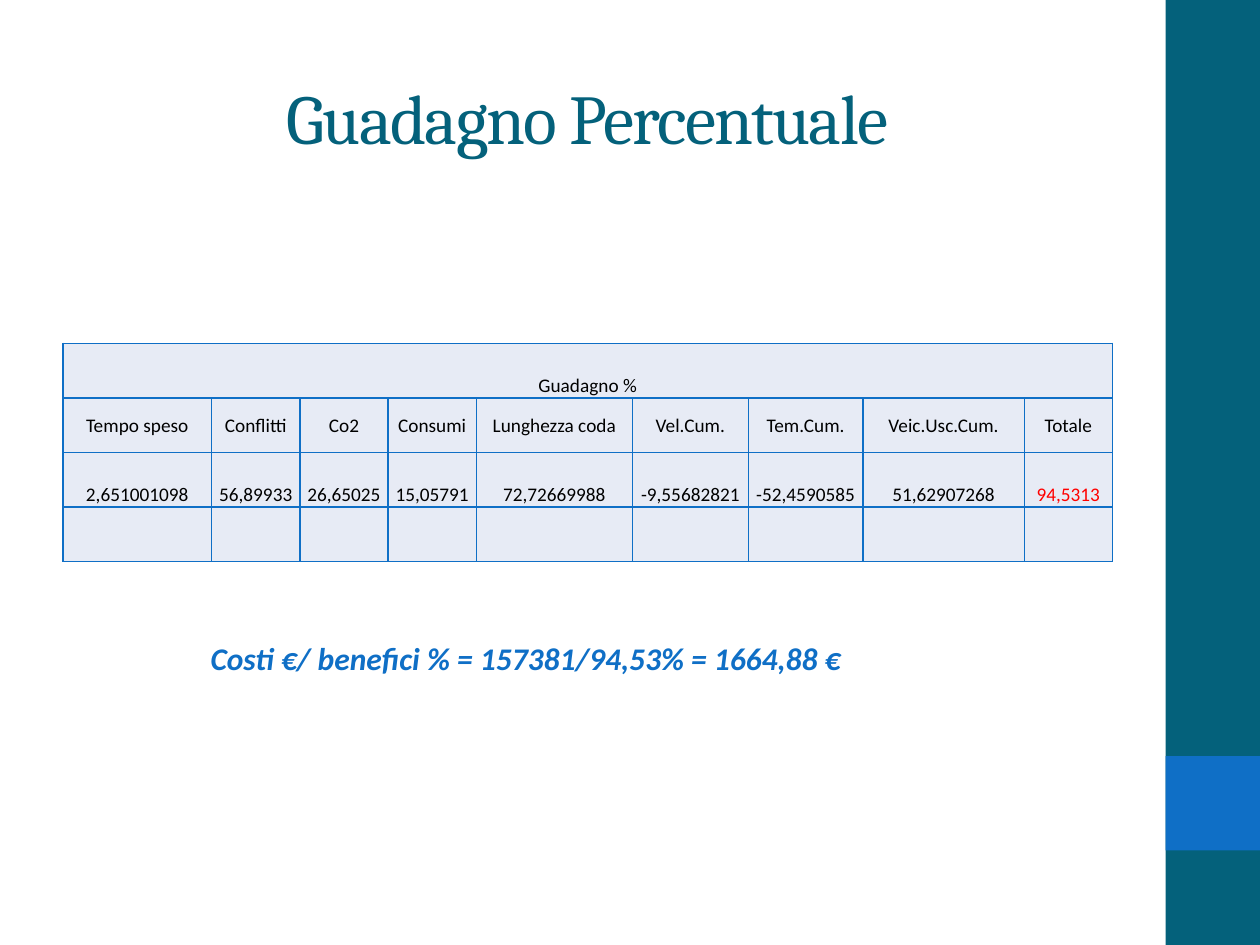
from pptx import Presentation
from pptx.dml.color import RGBColor as Rgb
from pptx.enum.shapes import MSO_SHAPE as Form
from pptx.enum.text import MSO_ANCHOR as Anchor, PP_ALIGN as Align
from pptx.oxml import parse_xml
from pptx.oxml.ns import nsdecls
from pptx.util import Inches, Pt

UNIT = 0.25  # side of one grid square: 40 columns by 30 rows
TEAL, BLUE, PALE, RED = "04617B", "0F6FC6", "E7EBF5", "FF0000"


def color(code):
    return Rgb.from_string(code)


def grid(*steps):
    return [Inches(step * UNIT) for step in steps]


def write(frame, text, size=11, face="Calibri", ink="000000",
          bold=False, slant=False, track=0, line=None, after=0):
    """Put one centred, formatted paragraph in a text frame."""
    para = frame.paragraphs[0]
    para.alignment = Align.CENTER
    para.space_after = Pt(after)
    if line:
        para.line_spacing = line
    font = para.font
    if text:
        run = para.add_run()
        run.text = text
        font = run.font
        if track:
            run._r.get_or_add_rPr().set("spc", str(track * 100))
    font.size, font.name = Pt(size), face
    font.bold, font.italic = bold, slant
    font.color.rgb = color(ink)


class Page:
    def __init__(self, deck, ink=BLUE, fill=PALE):
        self.slide = deck.slides.add_slide(deck.slide_layouts[6])
        self.ink, self.fill = ink, fill

    def back(self, code):
        paint = self.slide.background.fill
        paint.solid()
        paint.fore_color.rgb = color(code)

    def block(self, place, code):
        shape = self.slide.shapes.add_shape(Form.RECTANGLE, *grid(*place))
        shape.shadow.inherit = False
        shape.fill.solid()
        shape.fill.fore_color.rgb = color(code)
        shape.line.fill.background()

    def text(self, place, text, anchor=Anchor.TOP, **style):
        frame = self.slide.shapes.add_textbox(*grid(*place)).text_frame
        frame.word_wrap = True
        frame.vertical_anchor = anchor
        write(frame, text, **style)

    def edge(self, cell):
        """Draw the four borders of a cell; they precede its fill."""
        props = cell._tc.get_or_add_tcPr()
        for spot, side in enumerate("LRTB"):
            props.insert(spot, parse_xml(
                f'<a:ln{side} {nsdecls("a")} w="12700"><a:solidFill>'
                f'<a:srgbClr val="{self.ink}"/></a:solidFill></a:ln{side}>'))

    def table(self, place, widths, rows, anchors, inks):
        table = self.slide.shapes.add_table(
            len(rows), len(widths), *grid(*place)).table
        table.first_row = table.horz_banding = False
        for col, width in zip(table.columns, widths):
            col.width = Inches(width)
        for r, row in enumerate(rows):
            for c, text in enumerate(row):
                cell = table.cell(r, c)
                cell.margin_left = cell.margin_right = Inches(0.01)
                cell.margin_top, cell.margin_bottom = Inches(0.01), 0
                cell.vertical_anchor = anchors[r]
                cell.fill.solid()
                cell.fill.fore_color.rgb = color(self.fill)
                self.edge(cell)
                write(cell.text_frame, text, ink=inks.get((r, c), "000000"))
        table.cell(0, 0).merge(table.cell(0, len(widths) - 1))


def main():
    deck = Presentation()
    deck.slide_width, deck.slide_height = grid(40, 30)
    page = Page(deck)
    page.back("FFFFFF")

    # Side band with its accent square
    page.block((37, 0, 3, 30), TEAL)
    page.block((37, 24, 3, 3), BLUE)

    # Title
    page.text((2, 1.2, 33.3, 5), "Guadagno Percentuale", Anchor.MIDDLE,
              size=40, face="Cambria", ink=TEAL, track=-1)

    # Gains by measure, the total in red
    heads = ["Tempo speso", "Conflitti", "Co2", "Consumi", "Lunghezza coda",
             "Vel.Cum.", "Tem.Cum.", "Veic.Usc.Cum.", "Totale"]
    gains = ["2,651001098", "56,89933", "26,65025", "15,05791", "72,72669988",
             "-9,55682821", "-52,4590585", "51,62907268", "94,5313"]
    blank = [""] * len(heads)
    page.table((2, 10.9, 33.3, 6.92),
               [1.18, 0.7, 0.7, 0.7, 1.24, 0.92, 0.91, 1.28, 0.7],
               [["Guadagno %"] + blank[1:], heads, gains, blank],
               [Anchor.BOTTOM, Anchor.MIDDLE, Anchor.BOTTOM, Anchor.BOTTOM],
               {(2, len(heads) - 1): RED})

    # Cost to benefit ratio
    page.text((2.7, 20, 28, 1.6),
              "Costi €/ benefici % = 157381/94,53% = 1664,88 €",
              size=18, ink=BLUE, bold=True, slant=True, line=1.07, after=8)

    deck.save("out.pptx")


if __name__ == "__main__":
    main()
